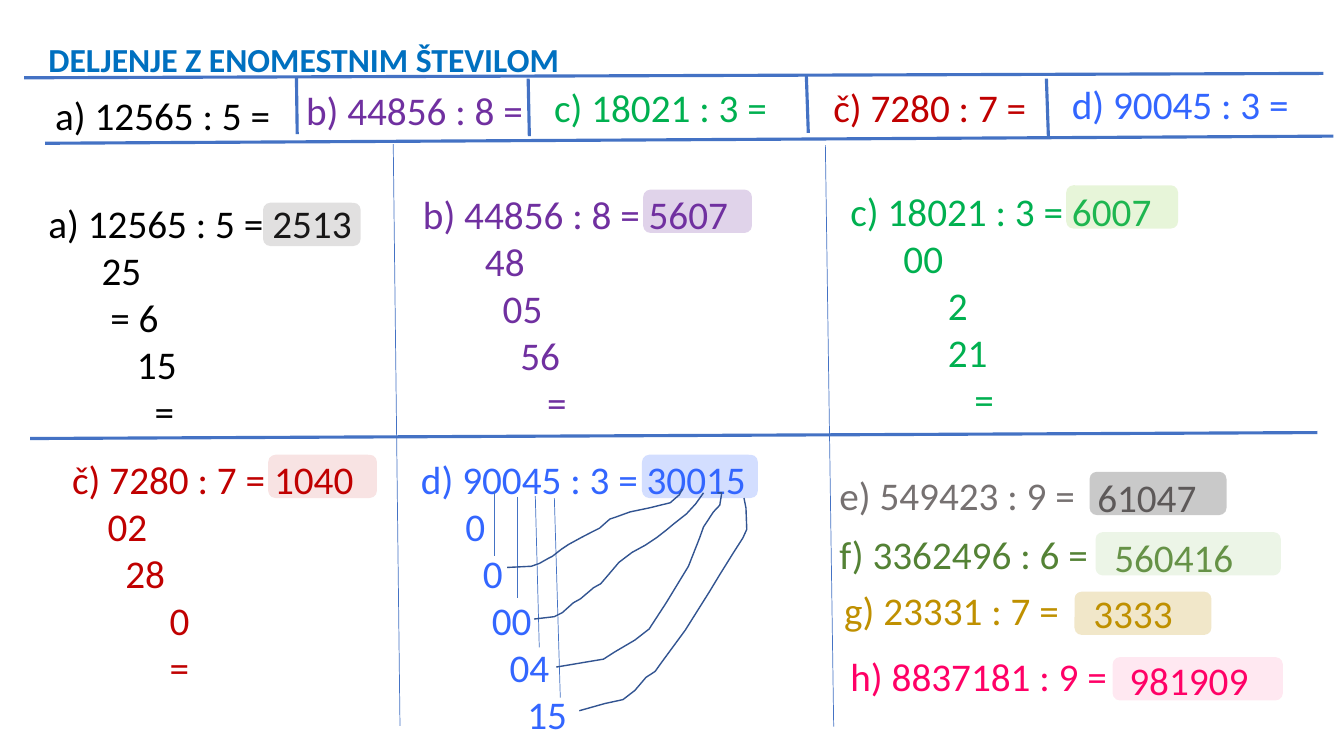
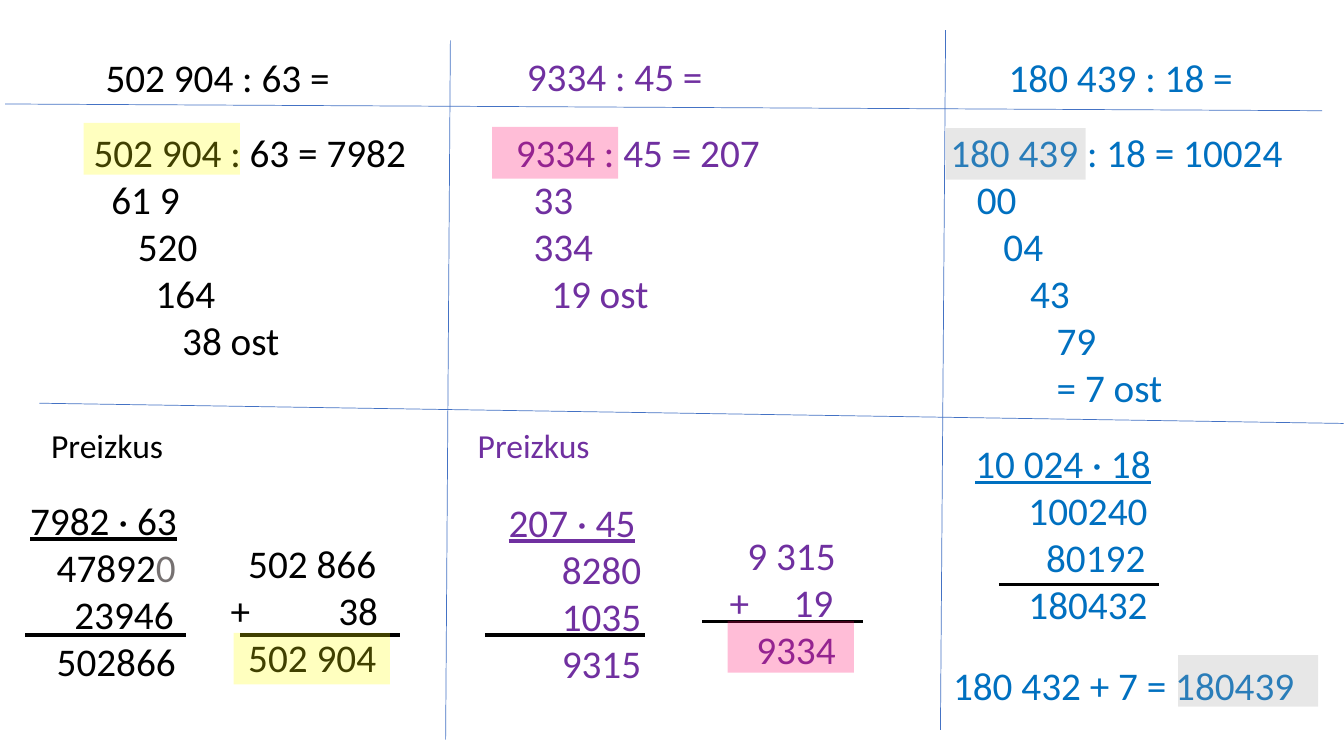
from dataclasses import dataclass

from lxml.etree import SubElement
from pptx import Presentation
from pptx.dml.color import RGBColor
from pptx.enum.shapes import MSO_CONNECTOR, MSO_SHAPE
from pptx.oxml.ns import qn
from pptx.util import Cm, Pt


@dataclass(frozen=True)
class Theme:
    font: str = "Calibri"
    head: int = 24
    body: int = 28
    space: float = 6.33
    thick: float = 2.25
    thin: float = 0.5
    pen: float = 1
    black: str = "000000"
    gray: str = "767171"
    silver: str = "A6A6A6"
    purple: str = "7030A0"
    green: str = "00B050"
    lime: str = "92D050"
    sage: str = "A9D18E"
    moss: str = "548235"
    red: str = "C00000"
    blue: str = "3366FF"
    azure: str = "0070C0"
    gold: str = "BF9000"
    pink: str = "FF0066"
    yellow: str = "FFFF00"
    rule: str = "4472C4"
    ink: str = "325491"


T = Theme()

TITLE = (0.97, 0.86, 13.41, T.azure, [(0, "DELJENJE Z ENOMESTNIM ŠTEVILOM")])

DIGIT = [
    (1.14, 2.18, 6.1, T.black, [(0, "a) 12565 : 5 =")]),
    (7.24, 2.06, 6.35, T.purple, [(1, "b) 44856 : 8 =")]),
    (13.49, 1.98, 7.29, T.green, [(1, "c) 18021 : 3 =")]),
    (20.75, 1.98, 5.61, T.red, [(0, "č) 7280 : 7 =")]),
    (26.54, 1.9, 6.35, T.blue, [(1, "d) 90045 : 3 =")]),
    (0.97, 4.9, 8.53, T.black, [
        (0, "a) 12565 : 5 = 2513"), (6, "25"), (7, "= 6"), (10, "15"), (12, "=")]),
    (10.41, 4.67, 8.53, T.purple, [
        (0, "b) 44856 : 8 = 5607"), (7, "48"), (9, "05"), (11, "56"), (14, "=")]),
    (21.18, 4.6, 8.43, T.green, [
        (0, "c) 18021 : 3 = 6007"), (6, "00"), (11, "2"), (11, "21"), (14, "=")]),
    (1.57, 11.35, 7.92, T.red, [
        (0, "č) 7280 : 7 = 1040"), (4, "02"), (6, "28"), (11, "0"), (11, "=")]),
    (10.36, 11.35, 9.04, T.blue, [
        (0, "d) 90045 : 3 = 30015"), (5, "0"), (7, "0"), (8, "00"), (10, "04"), (12, "15")]),
    (20.68, 11.76, 6.88, T.gray, [(1, "e) 549423 : 9 =")]),
    (20.68, 13.23, 8.53, T.moss, [(1, "f) 3362496 : 6 =")]),
    (20.8, 14.66, 8.53, T.gold, [(1, "g) 23331 : 7 =")]),
    (20.96, 16.31, 8.53, T.pink, [(1, "h) 8837181 : 9 =")]),
    (27.18, 11.79, 4.09, T.gray, [(1, "61047")]),
    (27.61, 13.31, 4.09, T.moss, [(1, "560416")]),
    (27.08, 14.73, 4.09, T.gold, [(1, "3333")]),
    (27.99, 16.41, 4.09, T.pink, [(1, "981909")]),
]

FRAME = [
    (1.14, 3.61, 33.6, 3.43), (0.61, 1.96, 33.35, 1.85),
    (7.47, 1.93, 7.49, 3.38), (26.37, 1.98, 26.42, 3.43),
    (13.31, 1.98, 13.34, 3.43), (20.32, 1.88, 20.37, 3.35),
    (0.76, 11.05, 33.2, 10.9),
]
HAIR = [
    (9.91, 3.63, 10.08, 18.29), (20.8, 3.66, 21.01, 18.31),
    (12.47, 12.37, 12.47, 14.02), (13.03, 12.52, 13.03, 15.06),
    (13.49, 12.5, 13.59, 16.31), (13.97, 12.55, 14.12, 17.58),
]

PILL = [
    (27.46, 11.89, 3.45, T.black, 21), (27.61, 13.41, 4.67, T.sage, 21),
    (27.08, 14.91, 3.45, T.gold, 21), (28.04, 16.56, 4.29, T.pink, 9),
    (16.21, 4.78, 2.74, T.purple, 21), (26.87, 4.67, 2.82, T.lime, 21),
    (6.76, 11.46, 2.74, T.red, 11), (6.63, 5.11, 2.46, T.gray, 21),
    (16.18, 11.46, 2.92, T.blue, 21),
]

CURVES = [
    [(12.78, 14.3), (13.39, 14.27), (13.59, 14.2), (13.82, 14.07), (13.92, 14.02),
     (14.15, 13.84), (14.33, 13.72), (14.66, 13.54), (14.91, 13.41), (15.11, 13.31),
     (15.37, 13.08), (15.52, 13.03), (15.88, 12.9), (16.36, 12.8), (16.89, 12.67),
     (17.12, 12.47), (17.2, 12.32)],
    [(13.46, 15.6), (13.97, 15.54), (14.17, 15.44), (14.45, 15.19), (14.63, 15.09),
     (14.96, 14.81), (15.14, 14.71), (15.32, 14.5), (15.6, 14.17), (15.93, 13.92),
     (16.26, 13.74), (16.56, 13.54), (16.79, 13.36), (16.97, 13.21), (17.3, 12.95),
     (17.53, 12.7), (17.73, 12.42)],
    [(14.02, 16.81), (15.21, 16.61), (15.49, 16.43), (16.0, 16.13), (16.36, 15.85),
     (16.79, 15.19), (17.35, 14.27), (17.63, 13.56), (17.73, 13.28), (17.98, 12.9),
     (18.14, 12.73), (18.19, 12.42), (18.08, 12.42)],
    [(14.6, 17.91), (15.24, 17.73), (15.7, 17.63), (16.0, 17.4), (16.28, 17.07),
     (16.51, 16.92), (16.66, 16.71), (17.27, 15.88), (17.88, 14.91), (18.14, 14.48),
     (18.49, 13.92), (18.72, 13.56), (18.82, 13.34), (18.8, 12.8), (18.75, 12.55)],
]

CHECKS = [
    (1.04, 10.57, 3.4, T.black, [(0, "Preizkus")]),
    (11.79, 10.57, 3.4, T.purple, [(0, "Preizkus")]),
]

LONG = [
    (2.41, 1.22, 6.48, T.black, [(0, "502 904 : 63 =")]),
    (13.03, 1.19, 6.48, T.purple, [(0, "9334 : 45 =")]),
    (25.17, 1.22, 6.3, T.azure, [(0, "180 439 : 18 =")]),
    (2.11, 3.1, 8.97, T.black, [
        (0, "502 904 : 63 = 7982"), (2, "61 9"), (5, "520"), (7, "164"), (10, "38 ost")]),
    (12.75, 3.1, 7.54, T.purple, [
        (0, "9334 : 45 = 207"), (2, "33"), (2, "334"), (4, "19 ost")]),
    (23.7, 3.1, 9.63, T.azure, [
        (0, "180 439 : 18 = 10024"), (3, "00"), (6, "04"), (9, "43"),
        (12, "79"), (12, "= 7 ost")]),
    (0.51, 12.37, 4.88, T.black, [
        (0, "7982 · 63"), (3, "47892", "0"), (5, "23946"), (3, "502866")]),
    (12.57, 12.42, 4.6, T.purple, [
        (0, "207 · 45"), (6, "8280"), (6, "1035"), (6, "9315")]),
    (24.33, 10.95, 5.61, T.azure, [
        (0, "10 024 · 18"), (6, "100240"), (8, "80192"), (6, "180432")]),
    (5.56, 13.46, 5.41, T.black, [(2, "502 866"), (0, "+\t38"), (2, "502 904")], 2.72),
    (18.14, 13.26, 5.41, T.purple, [(2, "9 315"), (0, "+\t19"), (3, "9334")], 1.61),
    (23.77, 16.54, 9.25, T.azure, [(0, "180 432 + 7 = 180439")]),
]

GRID = [
    (11.35, 1.02, 11.23, 18.64), (23.83, 0.76, 23.7, 18.39),
    (0.99, 10.16, 33.86, 10.67), (0.13, 2.62, 33.32, 2.79),
]
SUMS = [(0.64, 16), (6.05, 16), (12.22, 16), (17.7, 15.65), (25.17, 14.73)]
SPAN = 4.04

MARKS = [
    (2.11, 3.1, 3.94, T.yellow, 25), (5.89, 15.95, 3.94, T.yellow, 25),
    (12.4, 3.2, 3.18, T.pink, 26), (18.34, 15.65, 3.18, T.pink, 26),
    (23.83, 3.23, 3.53, T.silver, 26), (29.69, 16.51, 3.53, T.silver, 26),
]


def rgb(hue):
    return RGBColor.from_string(hue)


def write(slide, x, y, wide, hue, rows, stop=None, size=T.body, bold=False):
    high = 0.25 + len(rows) * 1.2 * size / T.body
    frame = slide.shapes.add_textbox(Cm(x), Cm(y), Cm(wide), Cm(high)).text_frame
    frame.word_wrap = True
    for i, (gap, text, *tail) in enumerate(rows):
        para = frame.paragraphs[0] if i == 0 else frame.add_paragraph()
        props = para._p.get_or_add_pPr()
        if gap:
            props.set("marL", str(Pt(gap * T.space)))
        if "\t" in text:
            tabs = SubElement(props, qn("a:tabLst"))
            SubElement(tabs, qn("a:tab"), pos=str(Cm(stop)), algn="l")
        font = para.font
        font.name, font.size, font.bold = T.font, Pt(size), bold
        font.underline = "·" in text
        font.color.rgb = rgb(hue)
        para.add_run().text = text
        for part in tail:
            run = para.add_run()
            run.text = part
            run.font.color.rgb = rgb(T.gray)


def rule(slide, ends, width, hue=T.rule):
    line = slide.shapes.add_connector(MSO_CONNECTOR.STRAIGHT, *map(Cm, ends))
    line.line.width = Pt(width)
    line.line.color.rgb = rgb(hue)
    SubElement(line._element.spPr, qn("a:effectLst"))


def mark(slide, kind, x, y, wide, high, hue, alpha):
    shape = slide.shapes.add_shape(kind, Cm(x), Cm(y), Cm(wide), Cm(high))
    shape.shadow.inherit = False
    shape.line.fill.background()
    shape.fill.solid()
    shape.fill.fore_color.rgb = rgb(hue)
    tint = shape._element.spPr.find(qn("a:solidFill"))[0]
    SubElement(tint, qn("a:alpha"), val=str(alpha * 1000))


def curve(slide, dots):
    (x, y), *rest = [(Cm(a), Cm(b)) for a, b in dots]
    pen = slide.shapes.build_freeform(x, y)
    pen.add_line_segments(rest, close=False)
    shape = pen.convert_to_shape()
    shape.shadow.inherit = False
    shape.fill.background()
    shape.line.width = Pt(T.pen)
    shape.line.color.rgb = rgb(T.ink)


def page(deck, boxes, thick, thin, hue, kind, high, marks):
    slide = deck.slides.add_slide(deck.slide_layouts[6])
    for box in boxes:
        write(slide, *box)
    for ends in thick:
        rule(slide, ends, T.thick, hue)
    for ends in thin:
        rule(slide, ends, T.thin)
    for x, y, wide, tint, alpha in marks:
        mark(slide, kind, x, y, wide, high, tint, alpha)
    return slide


def main():
    deck = Presentation()
    deck.slide_width, deck.slide_height = Cm(33.87), Cm(19.05)

    first = page(deck, DIGIT, FRAME, HAIR, T.rule,
                 MSO_SHAPE.ROUNDED_RECTANGLE, 1.09, PILL)
    write(first, *TITLE, size=T.head, bold=True)
    for dots in CURVES:
        curve(first, dots)

    bars = [(x, y, x + SPAN, y) for x, y in SUMS]
    second = page(deck, LONG, bars, GRID, T.black, MSO_SHAPE.RECTANGLE, 1.3, MARKS)
    for box in CHECKS:
        write(second, *box, size=T.head)

    deck.save("out.pptx")


if __name__ == "__main__":
    main()
